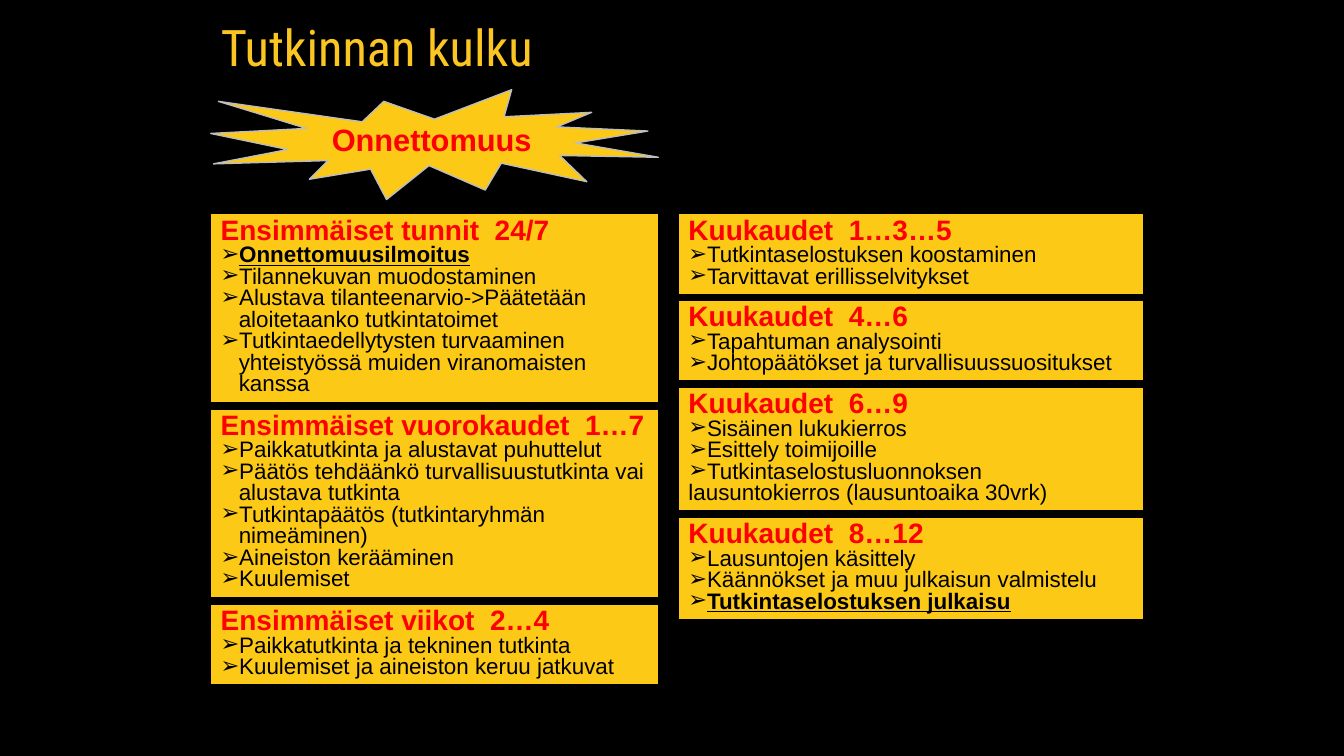
from dataclasses import dataclass

import pptx
import pptx.dml.color
import pptx.enum.shapes
import pptx.enum.text
import pptx.oxml
import pptx.oxml.ns
import pptx.util

SHAPE = pptx.enum.shapes.MSO_SHAPE
ANCHOR = pptx.enum.text.MSO_ANCHOR
ALIGN = pptx.enum.text.PP_ALIGN
AUTO_SIZE = pptx.enum.text.MSO_AUTO_SIZE


@dataclass(frozen=True)
class Theme:
    background: str = "000000"
    title: str = "FCC622"
    panel: str = "FCC916"
    heading: str = "FF0000"
    text: str = "000000"
    burst_line: str = "BDBDBD"
    title_font: str = "Roboto Condensed"
    body_font: str = "Arial"
    title_size: int = 36
    burst_size: int = 22
    heading_size: int = 20
    item_size: int = 16


@dataclass(frozen=True)
class Item:
    text: str
    lines: int = 1
    strong: bool = False


@dataclass(frozen=True)
class Phase:
    heading: str
    items: tuple[Item, ...]


@dataclass(frozen=True)
class Column:
    left: float
    width: float
    hang: float
    phases: tuple[Phase, ...]


THEME = Theme()
SLIDE_W = pptx.util.Inches(13.33)
SLIDE_H = pptx.util.Inches(7.5)
LEFT, LEFT_WIDTH = 15.68, 33.31
PHASES_TOP, PHASE_GAP = 28.27, 0.8
PHASE_BASE, LINE_HEIGHT = 4.93, 2.87

COLUMNS = (
    Column(LEFT, LEFT_WIDTH, 1.35, (
        Phase("Ensimmäiset tunnit  24/7", (
            Item("Onnettomuusilmoitus", strong=True),
            Item("Tilannekuvan muodostaminen"),
            Item("Alustava tilanteenarvio->Päätetään aloitetaanko tutkintatoimet", 2),
            Item("Tutkintaedellytysten turvaaminen yhteistyössä muiden viranomaisten kanssa", 3),
        )),
        Phase("Ensimmäiset vuorokaudet  1…7", (
            Item("Paikkatutkinta ja alustavat puhuttelut"),
            Item("Päätös tehdäänkö turvallisuustutkinta vai alustava tutkinta", 2),
            Item("Tutkintapäätös (tutkintaryhmän nimeäminen)", 2),
            Item("Aineiston kerääminen"),
            Item("Kuulemiset"),
        )),
        Phase("Ensimmäiset viikot  2…4", (
            Item("Paikkatutkinta ja tekninen tutkinta"),
            Item("Kuulemiset ja aineiston keruu jatkuvat"),
        )),
    )),
    Column(50.49, 34.58, 0, (
        Phase("Kuukaudet  1…3…5", (
            Item("Tutkintaselostuksen koostaminen"),
            Item("Tarvittavat erillisselvitykset"),
        )),
        Phase("Kuukaudet  4…6", (
            Item("Tapahtuman analysointi"),
            Item("Johtopäätökset ja turvallisuussuositukset"),
        )),
        Phase("Kuukaudet  6…9", (
            Item("Sisäinen lukukierros"),
            Item("Esittely toimijoille"),
            Item("Tutkintaselostusluonnoksen lausuntokierros (lausuntoaika 30vrk)", 2),
        )),
        Phase("Kuukaudet  8…12", (
            Item("Lausuntojen käsittely"),
            Item("Käännökset ja muu julkaisun valmistelu"),
            Item("Tutkintaselostuksen julkaisu", strong=True),
        )),
    )),
)


def cols(n: float) -> int:
    return round(SLIDE_W * n / 100)


def rows(n: float) -> int:
    return round(SLIDE_H * n / 100)


def rgb(value: str) -> pptx.dml.color.RGBColor:
    return pptx.dml.color.RGBColor.from_string(value)


def write(p, text: str, *, size: int, color: str, font: str = THEME.body_font,
          bold: bool = False, underline: bool = False,
          align=ALIGN.LEFT, spacing: float = 0.8) -> None:
    p.alignment = align
    p.line_spacing = spacing
    p.space_before = p.space_after = pptx.util.Pt(0)
    r = p.add_run()
    r.text = text
    r.font.name = font
    r.font.size = pptx.util.Pt(size)
    r.font.bold = bold
    r.font.underline = underline
    r.font.color.rgb = rgb(color)


def add_bullet(p, hang: float) -> None:
    pPr = p._p.get_or_add_pPr()
    pPr.set("marL", str(cols(hang)))
    pPr.set("indent", str(-cols(hang)))
    ns = pptx.oxml.ns.nsdecls("a")
    pPr.append(pptx.oxml.parse_xml(f'<a:buFont {ns} typeface="{THEME.body_font}"/>'))
    pPr.append(pptx.oxml.parse_xml(f'<a:buChar {ns} char="➢"/>'))


def add_panel(slide, kind, left: float, top: float, width: float, height: float,
              line: str, anchor):
    sp = slide.shapes.add_shape(kind, cols(left), rows(top), cols(width), rows(height))
    sp.shadow.inherit = False
    sp.fill.solid()
    sp.fill.fore_color.rgb = rgb(THEME.panel)
    sp.line.color.rgb = rgb(line)
    sp.line.width = pptx.util.Pt(1)
    tf = sp.text_frame
    tf.word_wrap = True
    tf.vertical_anchor = anchor
    return tf


def add_title(slide, text: str) -> None:
    sp = slide.shapes.title
    sp.left, sp.top, sp.width, sp.height = cols(LEFT), rows(1.33), cols(34.81), rows(10.67)
    tf = sp.text_frame
    tf.auto_size = AUTO_SIZE.NONE
    tf.vertical_anchor = ANCHOR.MIDDLE
    write(tf.paragraphs[0], text, size=THEME.title_size, color=THEME.title,
          font=THEME.title_font, spacing=0.9)


def add_burst(slide, text: str) -> None:
    tf = add_panel(slide, SHAPE.EXPLOSION1, LEFT, 11.87, LEFT_WIDTH, 14.53,
                   THEME.burst_line, ANCHOR.MIDDLE)
    write(tf.paragraphs[0], text, size=THEME.burst_size, color=THEME.heading,
          bold=True, align=ALIGN.CENTER, spacing=0.9)


def add_column(slide, column: Column) -> None:
    top = PHASES_TOP
    for phase in column.phases:
        height = PHASE_BASE + LINE_HEIGHT * sum(item.lines for item in phase.items)
        tf = add_panel(slide, SHAPE.RECTANGLE, column.left, top, column.width, height,
                       THEME.background, ANCHOR.TOP)
        tf.auto_size = AUTO_SIZE.SHAPE_TO_FIT_TEXT
        write(tf.paragraphs[0], phase.heading, size=THEME.heading_size,
              color=THEME.heading, bold=True)
        for item in phase.items:
            p = tf.add_paragraph()
            add_bullet(p, column.hang)
            write(p, item.text, size=THEME.item_size, color=THEME.text,
                  bold=item.strong, underline=item.strong)
        top += height + PHASE_GAP


def main() -> None:
    prs = pptx.Presentation()
    prs.slide_width, prs.slide_height = SLIDE_W, SLIDE_H
    slide = prs.slides.add_slide(prs.slide_layouts.get_by_name("Title Only"))
    slide.background.fill.solid()
    slide.background.fill.fore_color.rgb = rgb(THEME.background)
    add_title(slide, "Tutkinnan kulku")
    add_burst(slide, "Onnettomuus")
    for column in COLUMNS:
        add_column(slide, column)
    prs.save("out.pptx")


if __name__ == "__main__":
    main()
